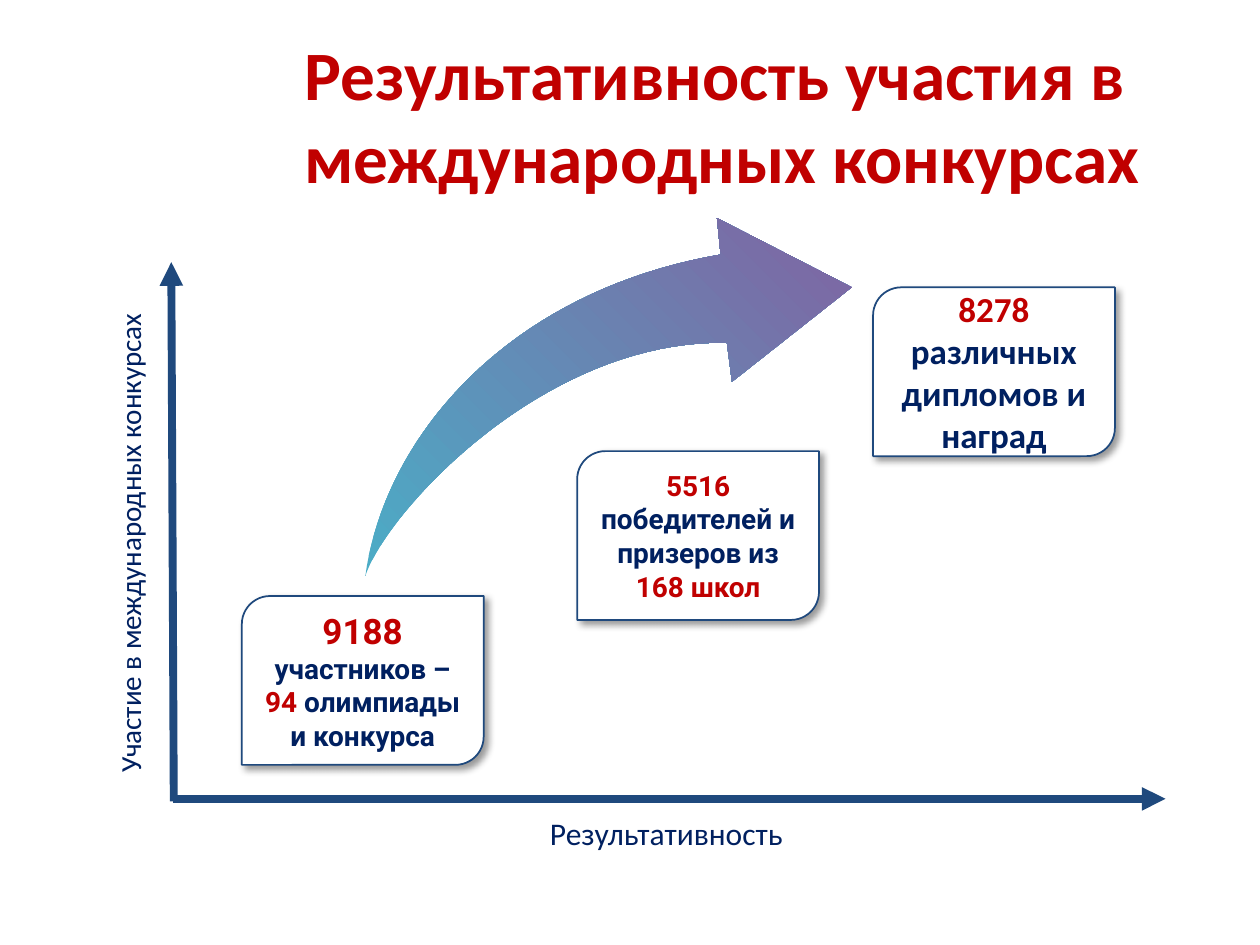
import pptx
import pptx.dml.color
import pptx.enum.dml
import pptx.enum.shapes
import pptx.enum.text
import pptx.oxml
import pptx.oxml.ns
import pptx.util

Pt = pptx.util.Pt
NAVY, RED, AXIS_BLUE = "002060", "C00000", "1F497D"
DRAWING = pptx.oxml.ns.nsdecls("a")
CARD_SHADOW = (
    f'<a:outerShdw {DRAWING} blurRad="{Pt(4)}" dist="{Pt(3)}" dir="2700000" '
    'algn="tl" rotWithShape="0"><a:srgbClr val="000000"><a:alpha val="40000"/>'
    "</a:srgbClr></a:outerShdw>"
)


def color(value):
    return pptx.dml.color.RGBColor.from_string(value)


def set_values(target, values):
    for name, value in values.items():
        setattr(target, name, value)


def write(shape, spans, inset, anchor, align):
    frame = shape.text_frame
    set_values(frame, {
        "word_wrap": True,
        "vertical_anchor": anchor,
        "margin_left": inset[0],
        "margin_right": inset[0],
        "margin_top": inset[1],
        "margin_bottom": inset[1],
    })
    para = frame.paragraphs[0]
    para.alignment = align
    for text, font, size, ink, bold in spans:
        span = para.add_run()
        span.text = text
        set_values(span.font, {"name": font, "size": Pt(size), "bold": bold})
        span.font.color.rgb = color(ink)


def add_label(page, box, spans, anchor="TOP", align="CENTER", rotation=0):
    label = page.shapes.add_textbox(*map(Pt, box))
    label.rotation = rotation
    write(label, spans, (Pt(7.2), Pt(3.6)),
          pptx.enum.text.MSO_ANCHOR[anchor], pptx.enum.text.PP_ALIGN[align])


def add_axis(page, start, end):
    axis = page.shapes.add_connector(
        pptx.enum.shapes.MSO_CONNECTOR.STRAIGHT, *map(Pt, start + end))
    axis.line.width = Pt(4.5)
    axis.line.color.rgb = color(AXIS_BLUE)
    axis.line._get_or_add_ln().append(
        pptx.oxml.parse_xml(f'<a:tailEnd {DRAWING} type="triangle"/>'))
    axis._element.spPr.append(pptx.oxml.parse_xml(f"<a:effectLst {DRAWING}/>"))


def add_axes(page, box):
    left, top, width, height = box
    bottom = top + height
    add_axis(page, (left, bottom), (left + width, bottom))
    add_axis(page, (left + 0.7, bottom + 1.4), (left - 0.7, top))
    add_label(page, (left + 15.1, bottom + 5, 534.2, 28.8),
              [("Результативность", "Calibri", 18, NAVY, False)])
    add_label(page, (left - 169.9, top + 146.2, 292.3, 28.8),
              [("Участие в международных конкурсах", "Calibri", 16.6, NAVY, False)],
              rotation=270)


def add_card(page, box, spans):
    card = page.shapes.add_shape(
        pptx.enum.shapes.MSO_SHAPE.ROUND_2_DIAG_RECTANGLE, *map(Pt, box))
    card.fill.solid()
    card.fill.fore_color.rgb = color("FFFFFF")
    card.line.width = Pt(1)
    card.line.color.rgb = color(AXIS_BLUE)
    card.shadow.inherit = False
    effects = card._element.spPr.find(pptx.oxml.ns.qn("a:effectLst"))
    effects.append(pptx.oxml.parse_xml(CARD_SHADOW))
    write(card, spans, (Pt(3.6), Pt(3.6)),
          pptx.enum.text.MSO_ANCHOR.MIDDLE, pptx.enum.text.PP_ALIGN.CENTER)


def curve(points, steps=40):
    for step in range(1, steps + 1):
        t = step / steps
        weights = ((1 - t) ** 3, 3 * t * (1 - t) ** 2, 3 * t * t * (1 - t), t ** 3)
        yield tuple(sum(w * point[axis] for w, point in zip(weights, points))
                    for axis in (0, 1))


def add_growth_arrow(page, box):
    left, top, width, height = box
    tail = (0, height)
    neck_top, neck_bottom = (203, 20.9), (206.6, 71.3)
    head = [(200.9, 0), (width, 39.6), (209.5, 93.6), neck_bottom]
    outline = [
        *curve([tail, (10.8, 125.3), (81.4, 41.8), neck_top]),
        *head,
        *curve([neck_bottom, (102.2, 69.1), (12.2, 167.8), tail]),
    ]
    builder = page.shapes.build_freeform(Pt(left), Pt(top + height))
    builder.add_line_segments(
        [(Pt(left + x), Pt(top + y)) for x, y in outline], close=True)
    arrow = builder.convert_to_shape()
    arrow.shadow.inherit = False
    arrow.line.fill.background()
    arrow.fill.gradient()
    arrow.fill.gradient_angle = 45
    for stop, position, ink in zip(arrow.fill.gradient_stops, (0, 1), ("4BACC6", "8064A2")):
        stop.position = position
        stop.color.rgb = color(ink)


def build_slide(deck):
    page = deck.slides.add_slide(deck.slide_layouts[6])
    add_axes(page, (98.6, 149.8, 567.4, 306.7))
    card_size = (138.2, 96.5)
    cards = [
        ((138.2, 340.6), [
            ("9188 ", "Roboto", 20, RED, True),
            ("участников – ", "Roboto", 16, NAVY, True),
            ("94", "Roboto", 16, RED, True),
            (" олимпиады и конкурса", "Roboto", 16, NAVY, True),
        ]),
        ((498.9, 164.2), [
            ("8278 ", "Calibri", 20, RED, True),
            ("различных дипломов и наград", "Calibri", 20, NAVY, True),
        ]),
        ((329.8, 257.8), [
            ("5516 ", "Roboto", 16, RED, True),
            ("победителей и призеров из ", "Roboto", 16, NAVY, True),
            ("168 школ", "Roboto", 16, RED, True),
        ]),
    ]
    for corner, spans in cards:
        add_card(page, corner + card_size, spans)
    add_label(page, (167, 20.2, 535.7, 90),
              [("Результативность участия в международных конкурсах",
                "Calibri", 39.6, RED, True)], "MIDDLE", "LEFT")
    add_growth_arrow(page, (208.8, 124.6, 277.9, 204.5))


def main():
    deck = pptx.Presentation()
    set_values(deck, {"slide_width": Pt(720), "slide_height": Pt(540)})
    build_slide(deck)
    deck.save("out.pptx")


if __name__ == "__main__":
    main()
